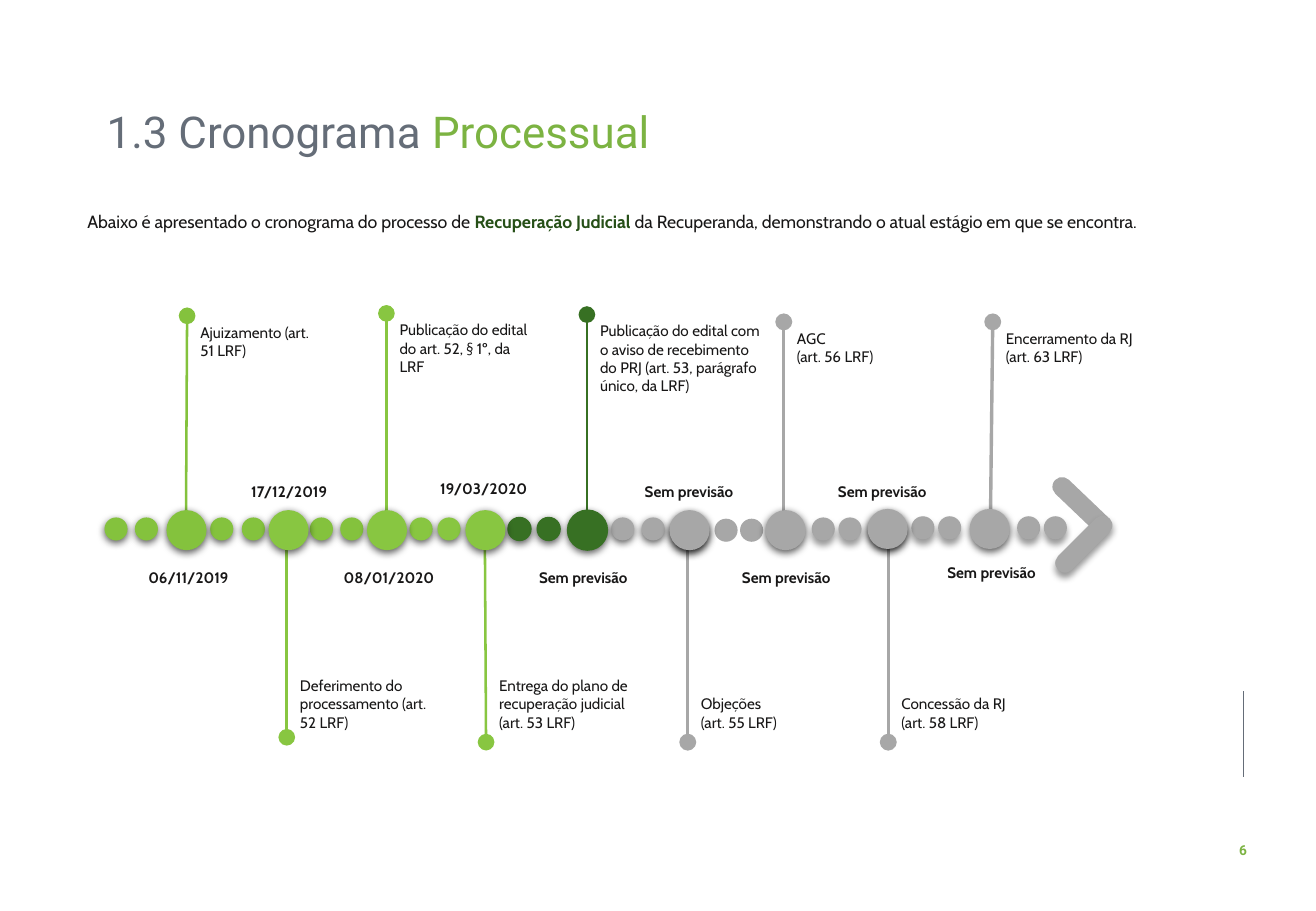
from pptx import Presentation
from pptx.dml.color import RGBColor
from pptx.enum.shapes import MSO_CONNECTOR, MSO_SHAPE
from pptx.enum.text import MSO_ANCHOR, PP_ALIGN
from pptx.oxml.ns import qn
from pptx.util import Inches, Pt
from lxml import etree

STRAIGHT = MSO_CONNECTOR.STRAIGHT
OVAL, PILL = MSO_SHAPE.OVAL, MSO_SHAPE.ROUNDED_RECTANGLE
TOP, MIDDLE, BOTTOM = MSO_ANCHOR.TOP, MSO_ANCHOR.MIDDLE, MSO_ANCHOR.BOTTOM
LEFT, CENTER = PP_ALIGN.LEFT, PP_ALIGN.CENTER

# Grid: 1083 columns by 750 rows
COLS, ROWS = 1083, 750
UNIT = Inches(0.01)
BIG, SMALL = 33, 19
SMALL_TOP = 426

COLORS = {
    "ink": "181717", "slate": "656D78", "accent": "7CB342", "strong": "264F17",
    "lime": "84C23D", "green": "88C641", "dark": "377023", "gray": "A7A7A7",
}
# Opacity %, blur pt, distance pt
SHADOWS = {"tight": (63, 4.5, 1.5), "soft": (40, 4, 3), "deep": (88, 4.5, 2)}

TITLE = [("1.3 Cronograma ", "slate", False), ("Processual", "accent", False)]
INTRO = [
    ("Abaixo é apresentado o cronograma do processo de ", "ink", False),
    ("Recuperação Judicial ", "strong", True),
    ("da Recuperanda, demonstrando o atual estágio em que se encontra.", "ink", False),
]
PAGE = "6"

# Circle (left, top), colour, shadow, stem foot column, stem tip (column, row),
# date, date (centre, top), label, label width; tips above the axis have dates below it
STAGES = [
    (137, 420, "lime", "tight", 153, (154, 260), "06/11/2019", (155, 463),
     "Ajuizamento (art. 51 LRF)", 111),
    (221, 420, "green", "tight", 236, (236, 607), "17/12/2019", (238, 392),
     "Deferimento do processamento (art. 52 LRF)", 137),
    (302, 420, "green", "tight", 318, (318, 258), "08/01/2020", (320, 463),
     "Publicação do edital do art. 52, § 1º, da LRF", 130),
    (383, 420, "green", "tight", 399, (400, 611), "19/03/2020", (398, 390),
     "Entrega do plano de recuperação judicial (art. 53 LRF)", 140),
    (467, 420, "dark", "tight", 483, (483, 259), "Sem previsão", (480, 463),
     "Publicação do edital com o aviso de recebimento do PRJ "
     "(art. 53, parágrafo único, da LRF)", 156),
    (551, 420, "gray", "deep", 566, (566, 611), "Sem previsão", (567, 392),
     "Objeções\n(art. 55 LRF)", 110),
    (630, 420, "gray", "tight", 645, (645, 265), "Sem previsão", (647, 463),
     "AGC\n(art. 56 LRF)", 110),
    (714, 419, "gray", "deep", 731, (731, 611), "Sem previsão", (726, 392),
     "Concessão da RJ\n(art. 58 LRF)", 133),
    (798, 419, "gray", "tight", 815, (817, 265), "Sem previsão", (816, 459),
     "Encerramento da RJ\n(art. 63 LRF)", 158),
]

# Small dots between stages: left columns, colour, shadow, rows below SMALL_TOP
DOTS = [
    ((86, 111), "lime", "tight", 0), ((173, 199), "lime", "tight", 0),
    ((255, 280), "lime", "tight", 0), ((337, 360), "green", "tight", 0),
    ((418, 442), "dark", "tight", 0), ((503, 528), "gray", "tight", 0),
    ((588, 609), "gray", None, 1), ((668, 690), "gray", "soft", 0),
    ((750, 772), "gray", "soft", -1), ((837, 859), "gray", "soft", -1),
]
ARROW = [(860, 408, 43.7, None), (862, 440, 315, "soft")]
ARROW_W, ARROW_H = 60, 16


def rgb(name):
    return RGBColor.from_string(COLORS[name])


def box(x, y, w, h):
    return [round(v * UNIT) for v in (x, y, w, h)]


def add_text(x, y, w, h, text, size, font="Cabin", color="ink", bold=False,
             align=LEFT, anchor=TOP):
    tf = s.shapes.add_textbox(*box(x, y, w, h)).text_frame
    tf.word_wrap = True
    tf.vertical_anchor = anchor
    runs = [(text, color, bold)] if isinstance(text, str) else text
    if isinstance(text, str):
        tf.text = text
    else:
        for part, _, _ in runs:
            tf.paragraphs[0].add_run().text = part
    for p in tf.paragraphs:
        p.alignment = align
        for i, r in enumerate(p.runs):
            _, name, heavy = runs[min(i, len(runs) - 1)]
            r.font.name, r.font.size, r.font.bold = font, Pt(size), heavy
            r.font.color.rgb = rgb(name)
    return tf


def add_line(x1, y1, x2, y2, color, width, dot=False):
    c = s.shapes.add_connector(STRAIGHT, *box(x1, y1, x2, y2))
    c.line.color.rgb = rgb(color)
    c.line.width = Pt(width)
    if dot:
        etree.SubElement(c.line._get_or_add_ln(), qn("a:tailEnd"),
                         type="oval", w="lg", len="lg")
    etree.SubElement(c._element.spPr, qn("a:effectLst"))


def add_mark(kind, x, y, w, h, color, shadow):
    sp = s.shapes.add_shape(kind, *box(x, y, w, h))
    sp.fill.solid()
    sp.fill.fore_color.rgb = rgb(color)
    if color == "dark":
        sp.line.color.rgb = rgb(color)
        sp.line.width = Pt(0.75)
    else:
        sp.line.fill.background()
    sp.shadow.inherit = False
    if shadow:
        alpha, blur, dist = SHADOWS[shadow]
        effects = sp._element.spPr.find(qn("a:effectLst"))
        outer = etree.SubElement(effects, qn("a:outerShdw"), blurRad=str(Pt(blur)),
                                 dist=str(Pt(dist)), dir="5400000", rotWithShape="0")
        clr = etree.SubElement(outer, qn("a:srgbClr"), val="000000")
        etree.SubElement(clr, qn("a:alpha"), val=str(alpha * 1000))
    return sp


prs = Presentation()
prs.slide_width, prs.slide_height = COLS * UNIT, ROWS * UNIT
s = prs.slides.add_slide(prs.slide_layouts[6])

# Page frame, title and introduction
add_line(1023, 569, 1023, 640, "slate", 0.5)
add_text(1006, 688, 34, 24, PAGE, 8.1, "Roboto", "accent", True, CENTER)
add_text(78, 86, 818, 53, TITLE, 26, "Roboto").paragraphs[0].line_spacing = 0.9
add_text(62, 166, 986, 30, INTRO, 10.5).paragraphs[0].line_spacing = 1.14

# Stems, labels and dates
for _, top, color, _, foot, (tip_x, tip_y), date, (mid, date_y), label, width in STAGES:
    above = tip_y < top
    add_line(foot, top + BIG / 2, tip_x, tip_y, color, 2 if color == "gray" else 1.5, True)
    if above:
        add_text(tip_x + 1, tip_y + 1, width, 40, label, 9)
    else:
        add_text(tip_x + 1, 551, width, 56, label, 9, anchor=BOTTOM)
    add_text(mid - 65, date_y, 130, 25, date, 9, bold=True, align=CENTER,
             anchor=MIDDLE if above else TOP)

# Small dots, arrow head, stage circles
for lefts, color, shadow, shift in DOTS:
    for x in lefts:
        add_mark(OVAL, x, SMALL_TOP + shift, SMALL, SMALL, color, shadow)
for x, y, angle, shadow in ARROW:
    bar = add_mark(PILL, x, y, ARROW_W, ARROW_H, "gray", shadow)
    bar.adjustments[0] = 0.5
    bar.rotation = angle
for x, y, color, shadow, *_ in STAGES:
    add_mark(OVAL, x, y, BIG, BIG, color, shadow)

prs.save("out.pptx")
